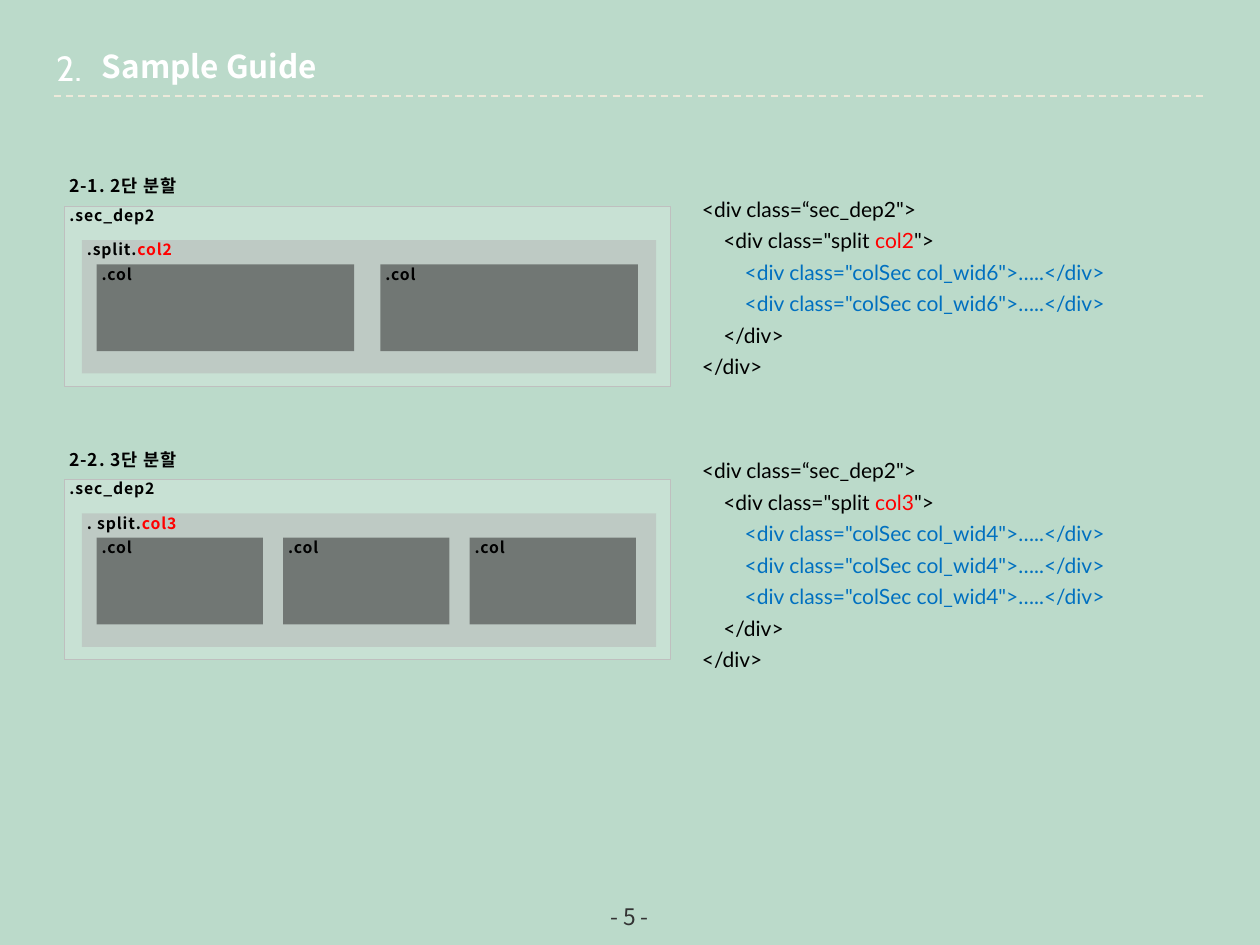
from lxml.etree import SubElement
from pptx import Presentation
from pptx.dml.color import RGBColor
from pptx.enum.dml import MSO_LINE
from pptx.enum.shapes import MSO_CONNECTOR, MSO_SHAPE
from pptx.enum.text import MSO_ANCHOR, MSO_AUTO_SIZE, PP_ALIGN
from pptx.oxml.ns import qn
from pptx.util import Cm, Pt

MINT = RGBColor(0xBB, 0xDA, 0xCA)
CREAM = RGBColor(0xEC, 0xE9, 0xDA)
WHITE = RGBColor(0xFF, 0xFF, 0xFF)
BLACK = RGBColor(0, 0, 0)
RED = RGBColor(0xFF, 0, 0)
BLUE = RGBColor(0, 0x70, 0xC0)
SILVER = RGBColor(0xBF, 0xBF, 0xBF)
GRAY = RGBColor(0xB5, 0xB5, 0xB5)
CHARCOAL = RGBColor(0x26, 0x26, 0x26)
PAGE_GRAY = RGBColor(0x33, 0x33, 0x33)

SANS, CODE, NUMERAL = "Noto Sans CJK KR", "Lato", "Cabin"


class GuideSlide:
    def __init__(self, slide):
        self.slide = slide
        fill = slide.background.fill
        fill.solid()
        fill.fore_color.rgb = MINT

    def style(self, paragraph, size, font=SANS, color=BLACK, bold=False, spacing=0):
        face = paragraph.font
        face.name, face.size, face.bold = font, Pt(size), bold
        face.color.rgb = color
        props = paragraph._p.pPr.find(qn("a:defRPr"))
        SubElement(props, qn("a:ea")).set("typeface", font)
        if spacing:
            for run in paragraph.runs:
                run._r.get_or_add_rPr().set("spc", str(int(spacing * 100)))

    def add_runs(self, paragraph, runs):
        """Add (text, color) runs; a color of None follows the paragraph."""
        for text, color in runs:
            run = paragraph.add_run()
            run.text = text
            if color is not None:
                run.font.color.rgb = color

    def set_margins(self, frame, left=0):
        frame.margin_left = Cm(left)
        frame.margin_top = frame.margin_right = frame.margin_bottom = 0

    def title(self, text, left, top, width, height):
        title = self.slide.shapes.title
        title.left, title.top, title.width, title.height = map(Cm, (left, top, width, height))
        frame = title.text_frame
        frame.text = text
        frame.auto_size = MSO_AUTO_SIZE.NONE
        frame.vertical_anchor = MSO_ANCHOR.TOP
        frame.paragraphs[0].alignment = PP_ALIGN.LEFT
        self.style(frame.paragraphs[0], 18, color=WHITE, bold=True)

    def text_box(self, left, top, width, height, wrap=True):
        box = self.slide.shapes.add_textbox(*map(Cm, (left, top, width, height)))
        box.text_frame.word_wrap = wrap
        return box.text_frame

    def centered(self, text, area, size, font, color):
        frame = self.text_box(*area)
        paragraph = frame.paragraphs[0]
        self.add_runs(paragraph, [(text, None)])
        paragraph.alignment = PP_ALIGN.CENTER
        self.style(paragraph, size, font, color)
        return frame

    def page_number(self, text):
        frame = self.centered(text, (9.73, 18.08, 5.92, 0.79), 13, SANS, PAGE_GRAY)
        self.set_margins(frame)
        frame.vertical_anchor = MSO_ANCHOR.MIDDLE

    def dashed_rule(self, left, right, y):
        rule = self.slide.shapes.add_connector(
            MSO_CONNECTOR.STRAIGHT, Cm(left), Cm(y), Cm(right), Cm(y))
        rule.line.color.rgb = CREAM
        rule.line.width = Pt(1)
        rule.line.dash_style = MSO_LINE.DASH
        SubElement(rule._element.spPr, qn("a:effectLst"))

    def heading(self, text, left, top):
        frame = self.text_box(left, top, 2.46, 0.7, wrap=False)
        self.set_margins(frame, 0.1)
        paragraph = frame.paragraphs[0]
        self.add_runs(paragraph, [(text, None)])
        paragraph.line_spacing = 1.5
        self.style(paragraph, 10, bold=True, spacing=0.5)

    def block(self, runs, area, color, opacity, outline=None):
        """Draw a translucent rectangle labelled in its top left corner."""
        block = self.slide.shapes.add_shape(MSO_SHAPE.RECTANGLE, *map(Cm, area))
        block.shadow.inherit = False
        block.fill.solid()
        block.fill.fore_color.rgb = color
        tint = block._element.spPr.find(qn("a:solidFill"))[0]
        SubElement(tint, qn("a:alpha")).set("val", str(opacity * 1000))
        if outline is None:
            block.line.fill.background()
        else:
            block.line.color.rgb = outline
            block.line.width = Pt(0.25)
        frame = block.text_frame
        self.set_margins(frame, 0.1)
        frame.vertical_anchor = MSO_ANCHOR.TOP
        paragraph = frame.paragraphs[0]
        self.add_runs(paragraph, runs)
        paragraph.alignment = PP_ALIGN.LEFT
        # Shapes carry a white font reference, so each run needs its own color
        for run, (_, tone) in zip(paragraph.runs, runs):
            run.font.color.rgb = tone or BLACK
        self.style(paragraph, 9, bold=True, spacing=0.5)

    def code(self, lines, left, top):
        frame = self.text_box(left, top, 9.8, 0.24 + 0.64 * len(lines))
        for index, runs in enumerate(lines):
            paragraph = frame.add_paragraph() if index else frame.paragraphs[0]
            self.add_runs(paragraph, runs)
            paragraph.line_spacing = Pt(18)
            self.style(paragraph, 12, CODE)

    def split_example(self, title, top, columns, col_width, col_step,
                      split_label, grid_class, code_top):
        left = 1.3
        name = f"col{columns}"
        self.heading(title, left, top - 0.83)
        self.block([(".sec_dep2", None)], (left, top, 12.22, 3.63), WHITE, 20, SILVER)
        self.block([(split_label, None), (name, RED)],
                   (left + 0.35, top + 0.69, 11.58, 2.69), GRAY, 50)
        for index in range(columns):
            self.block([(".col", None)],
                       (left + 0.65 + index * col_step, top + 1.18, col_width, 1.75),
                       CHARCOAL, 50)
        column_line = [(f'        <div class="colSec {grid_class}">…..</div>', BLUE)]
        self.code([
            [('<div class=“sec_dep2">', None)],
            [('    <div class="split ', None), (name, RED), ('">', None)],
            *[column_line] * columns,
            [("    </div>", None)],
            [("</div>", None)],
        ], 13.9, code_top)


def main():
    deck = Presentation()
    deck.slide_width, deck.slide_height = Cm(25.4), Cm(19.05)
    guide = GuideSlide(deck.slides.add_slide(deck.slide_layouts[5]))
    guide.page_number("- 5 -")
    guide.dashed_rule(1.08, 24.32, 1.93)
    guide.centered("2.", (0.69, 0.82, 1.4, 1.11), 20, NUMERAL, WHITE)
    guide.title("Sample Guide", 1.8, 0.82, 11.7, 1.03)
    guide.split_example("2-1. 2단 분할", 4.15, 2, 5.19, 5.72, ".split.", "col_wid6", 3.71)
    guide.split_example("2-2. 3단 분할", 9.66, 3, 3.35, 3.76, ". split.", "col_wid4", 8.98)
    deck.save("out.pptx")


if __name__ == "__main__":
    main()
